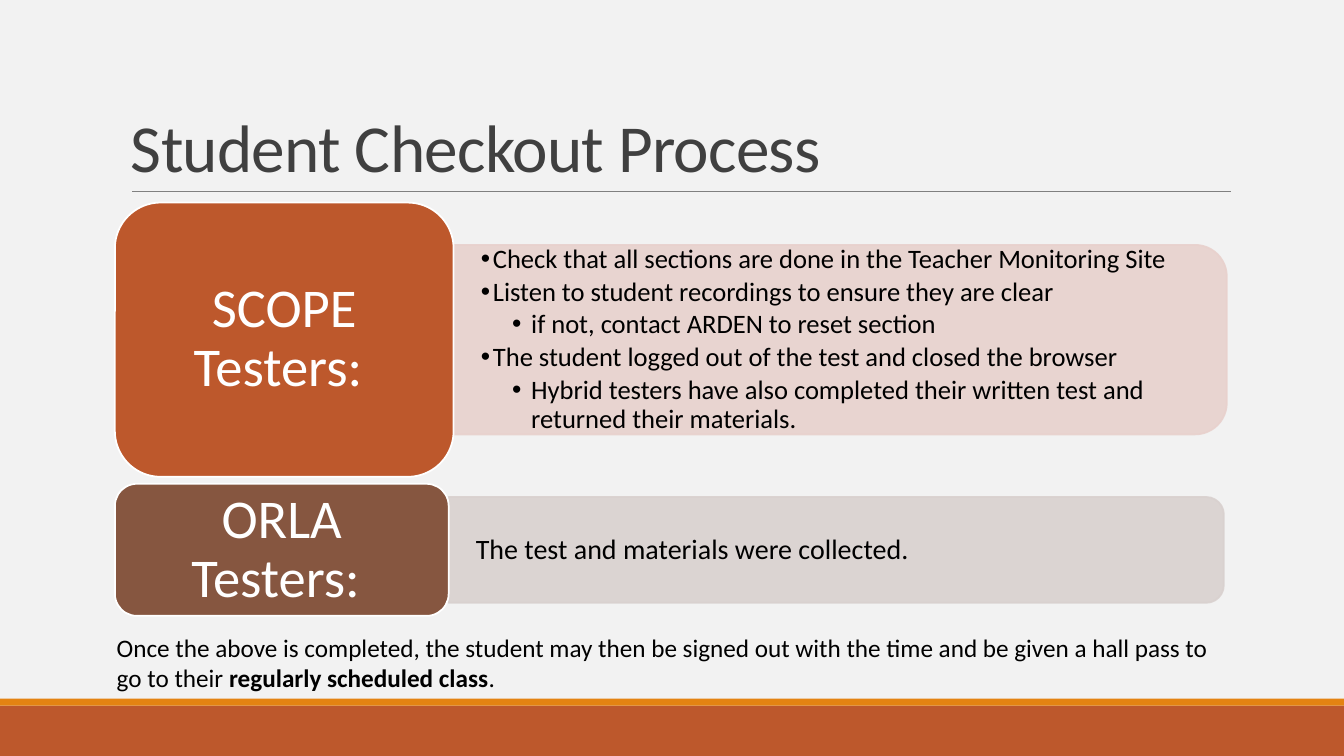
from dataclasses import dataclass

from lxml import etree
from pptx import Presentation
from pptx.dml.color import RGBColor
from pptx.enum.shapes import MSO_CONNECTOR, MSO_SHAPE
from pptx.enum.text import MSO_ANCHOR, PP_ALIGN
from pptx.oxml.ns import qn
from pptx.util import Inches, Pt

RECTANGLE = MSO_SHAPE.RECTANGLE
ROUNDED = MSO_SHAPE.ROUNDED_RECTANGLE
ROUNDED_TOP = MSO_SHAPE.ROUND_2_SAME_RECTANGLE
STRAIGHT = MSO_CONNECTOR.STRAIGHT
TOP, MIDDLE, BOTTOM = MSO_ANCHOR.TOP, MSO_ANCHOR.MIDDLE, MSO_ANCHOR.BOTTOM
LEFT, CENTER = PP_ALIGN.LEFT, PP_ALIGN.CENTER

BACKGROUND = RGBColor(0xF2, 0xF2, 0xF2)
RUST = RGBColor(0xBD, 0x58, 0x2C)
ORANGE = RGBColor(0xE4, 0x83, 0x12)
BROWN = RGBColor(0x86, 0x56, 0x40)
PINK = RGBColor(0xE8, 0xD1, 0xCD)
TAUPE = RGBColor(0xD9, 0xD1, 0xCF)
GRAY = RGBColor(0x80, 0x80, 0x80)
DARK = RGBColor(0x40, 0x40, 0x40)
BLACK = RGBColor(0x00, 0x00, 0x00)
WHITE = RGBColor(0xFF, 0xFF, 0xFF)

FONT = "Calibri"
WIDTH, HEIGHT = Inches(13.333), Inches(7.5)
LABEL_LEFT = 8.55
CORNER_INSET = 0.048  # share of a panel's height kept clear of its corners
LABEL_MARGINS = (0.16, 0.08)
PANEL_MARGINS = (0.27, 0.14)
BULLET_INDENTS = {1: (0.12, -0.12), 2: (0.5, -0.19)}


@dataclass
class Box:
    """Place in percent of the slide's width and height."""
    left: float
    top: float
    width: float
    height: float

    def lengths(self) -> tuple[int, int, int, int]:
        return (int(WIDTH * self.left / 100), int(HEIGHT * self.top / 100),
                int(WIDTH * self.width / 100), int(HEIGHT * self.height / 100))


@dataclass
class Line:
    runs: list[tuple[str, bool]]
    bullet_level: int = 0


@dataclass
class Group:
    label: str
    label_box: Box
    label_color: RGBColor
    panel_width: float
    panel_height: float
    panel_color: RGBColor
    text_size: float
    lines: list[Line]


GROUPS = [
    Group("SCOPE Testers: ", Box(LABEL_LEFT, 26.8, 25.2, 36.27), RUST,
          57.53, 25.07, PINK, 19, [
              Line([("Check that all sections are done in the Teacher Monitoring Site", False)], 1),
              Line([("Listen to student recordings to ensure they are clear", False)], 1),
              Line([("if not, contact ARDEN to reset section", False)], 2),
              Line([("The student logged out of the test and closed the browser", False)], 1),
              Line([("Hybrid testers have also completed their written test and "
                     "returned their materials.", False)], 2),
          ]),
    Group("ORLA Testers: ", Box(LABEL_LEFT, 64, 24.83, 17.47), BROWN,
          57.68, 14, TAUPE, 20,
          [Line([("The test and materials were collected.", False)])]),
]
CLOSING = Line([
    ("Once the above is completed, the student may then be signed out with the time "
     "and be given a hall pass to go to their ", False),
    ("regularly scheduled class", True),
    (".", False),
])


def write(shape, lines: list[Line], size: float, color: RGBColor, anchor=TOP,
          align=LEFT, margins=(0.1, 0.05), spacing=1.0, after=0.0, tracking=0) -> None:
    frame = shape.text_frame
    side, edge = (Inches(margin) for margin in margins)
    frame_format = {"word_wrap": True, "vertical_anchor": anchor,
                    "margin_left": side, "margin_right": side,
                    "margin_top": edge, "margin_bottom": edge}
    for name, value in frame_format.items():
        setattr(frame, name, value)
    paragraph_format = {"alignment": align, "line_spacing": spacing,
                        "space_after": Pt(size * after)}
    for index, line in enumerate(lines):
        paragraph = frame.add_paragraph() if index else frame.paragraphs[0]
        for name, value in paragraph_format.items():
            setattr(paragraph, name, value)
        if line.bullet_level:
            add_bullet(paragraph, line.bullet_level)
        for text, bold in line.runs:
            run = paragraph.add_run()
            run.text = text
            font_format = {"name": FONT, "size": Pt(size), "bold": bold}
            for name, value in font_format.items():
                setattr(run.font, name, value)
            run.font.color.rgb = color
            if tracking:
                run.font._element.set("spc", str(tracking))


def add_bullet(paragraph, level: int) -> None:
    margin, indent = BULLET_INDENTS[level]
    properties = paragraph._p.get_or_add_pPr()
    properties.set("marL", str(Inches(margin)))
    properties.set("indent", str(Inches(indent)))
    etree.SubElement(properties, qn("a:buFont")).set("typeface", "Arial")
    etree.SubElement(properties, qn("a:buChar")).set("char", "•")


def add_block(slide, kind, lengths, fill: RGBColor, outline: RGBColor | None = None):
    shape = slide.shapes.add_shape(kind, *lengths)
    shape.shadow.inherit = False
    shape.fill.solid()
    shape.fill.fore_color.rgb = fill
    if outline is None:
        shape.line.fill.background()
    else:
        shape.line.color.rgb = outline
        shape.line.width = Pt(1.25)
    return shape


def add_panel(slide, box: Box, color: RGBColor) -> None:
    left, top, width, height = box.lengths()
    shift = (width - height) // 2
    panel = add_block(slide, ROUNDED_TOP, (left + shift, top - shift, height, width), color, color)
    panel.rotation = 90
    for color_element in panel._element.spPr.iter(qn("a:srgbClr")):
        etree.SubElement(color_element, qn("a:alpha")).set("val", "90000")


def add_group(slide, group: Group) -> None:
    label_box = group.label_box
    panel_box = Box(label_box.left + label_box.width,
                    label_box.top + (label_box.height - group.panel_height) / 2,
                    group.panel_width, group.panel_height)
    add_panel(slide, panel_box, group.panel_color)

    left, top, width, height = panel_box.lengths()
    inset = int(height * CORNER_INSET)
    details = slide.shapes.add_textbox(left, top + inset, width - inset, height - 2 * inset)
    write(details, group.lines, group.text_size, BLACK, anchor=MIDDLE,
          margins=PANEL_MARGINS, spacing=0.9, after=0.15)

    label = add_block(slide, ROUNDED, label_box.lengths(), group.label_color, WHITE)
    write(label, [Line([(group.label, False)])], 39, WHITE, anchor=MIDDLE,
          align=CENTER, margins=LABEL_MARGINS, spacing=0.9)


def add_rule(slide, left: float, right: float, top: float) -> None:
    start, level, length, _ = Box(left, top, right - left, 0).lengths()
    rule = slide.shapes.add_connector(STRAIGHT, start, level, start + length, level)
    rule.line.color.rgb = GRAY
    rule.line.width = Pt(0.5)
    etree.SubElement(rule._element.spPr, qn("a:effectLst"))


def main() -> None:
    presentation = Presentation()
    presentation.slide_width, presentation.slide_height = WIDTH, HEIGHT
    slide = presentation.slides.add_slide(presentation.slide_layouts[6])
    slide.background.fill.solid()
    slide.background.fill.fore_color.rgb = BACKGROUND

    # Footer bands and title rule
    add_block(slide, RECTANGLE, Box(0, 93.33, 100, 6.67).lengths(), RUST)
    add_block(slide, RECTANGLE, Box(0, 92.4, 100, 0.93).lengths(), ORANGE)
    add_rule(slide, 9.83, 91.58, 25.33)

    # Title
    title = slide.shapes.add_textbox(*Box(9, 4.13, 82.5, 21.2).lengths())
    write(title, [Line([("Student Checkout Process", False)])], 48, DARK,
          anchor=BOTTOM, spacing=0.85, tracking=-50)

    # Tester groups
    for group in GROUPS:
        add_group(slide, group)

    # Closing note
    closing = slide.shapes.add_textbox(*Box(7.95, 82.93, 84.15, 13.47).lengths())
    write(closing, [CLOSING], 18, BLACK)

    presentation.save("out.pptx")


if __name__ == "__main__":
    main()
